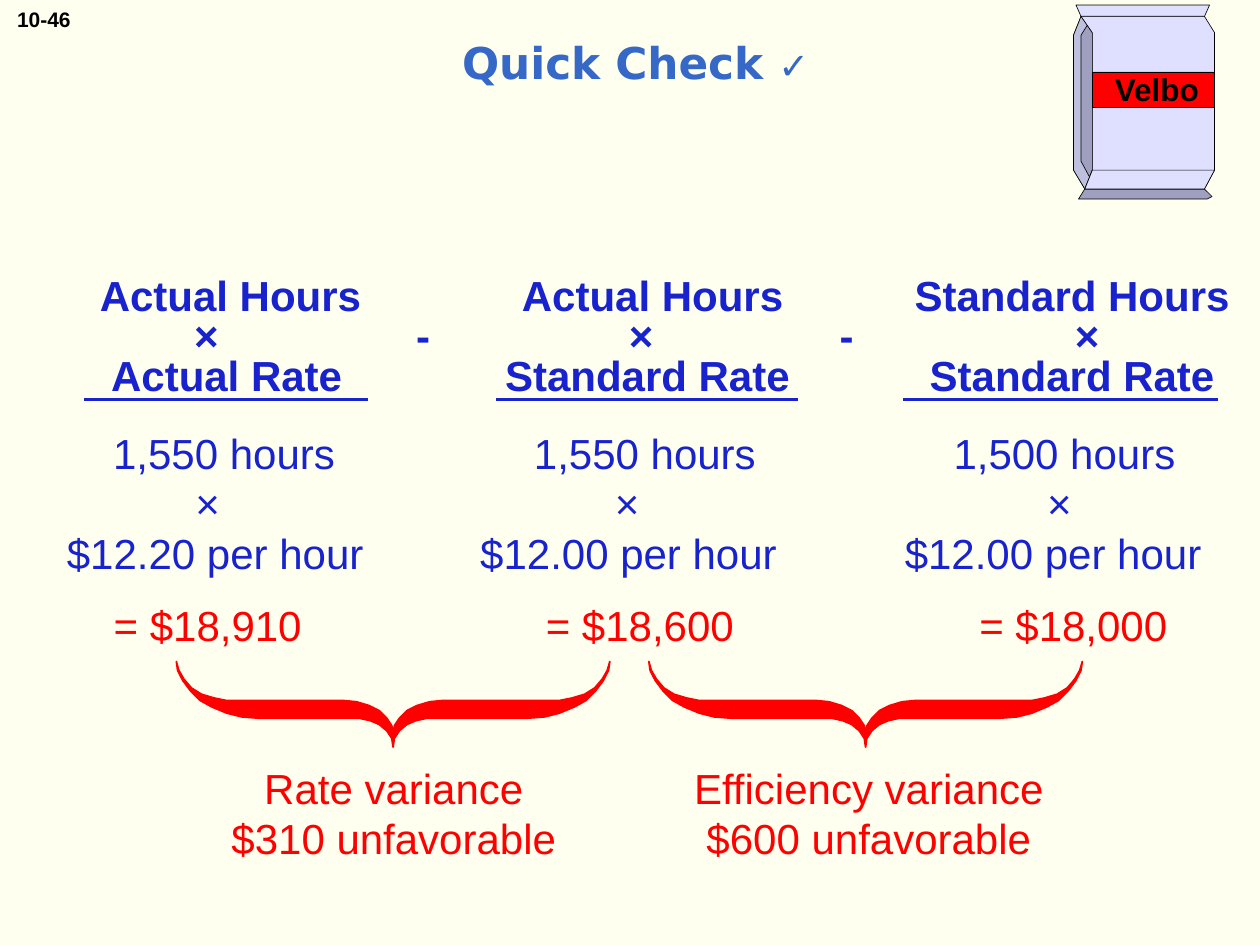
"""Builds the Quick Check slide on labor rate and efficiency variances."""
from lxml import etree
from pptx import Presentation
from pptx.dml.color import RGBColor
from pptx.enum import shapes, text
from pptx.oxml import ns
from pptx.util import Inches, Pt

CREAM = RGBColor(0xFF, 0xFF, 0xEF)
BLACK = RGBColor(0x00, 0x00, 0x00)
BLUE = RGBColor(0x18, 0x22, 0xCD)
TITLE_BLUE = RGBColor(0x35, 0x68, 0xC7)
RED = RGBColor(0xFF, 0x00, 0x00)
BAG_LIGHT = RGBColor(0xDF, 0xDF, 0xFF)
BAG_MID = RGBColor(0xBF, 0xBF, 0xDF)
BAG_DARK = RGBColor(0x9F, 0x9F, 0xBF)

HEADING = {"size": Pt(24), "bold": True, "name": "Arial"}
BODY = {"size": Pt(24), "bold": False, "name": "Arial"}
LABEL = {"size": Pt(18), "bold": True, "name": "Arial"}
PAGE = {"size": Pt(12), "bold": True, "name": "Arial"}
TITLE = {"size": Pt(25), "bold": True, "name": "DejaVu Sans"}
CHECK = {"size": Pt(21), "bold": True, "name": "DejaVu Sans"}

HEADING_ROWS = [
    ("Actual Hours|Actual Hours|Standard Hours", (1.83, 5.18, 8.51), BLUE, 0),
    ("×|-|×|-|×", (1.64, 3.36, 5.09, 6.72, 8.63), BLUE, 0),
    ("Actual Rate|Standard Rate|Standard Rate", (1.8, 5.14, 8.51), BLUE, 0),
]
AMOUNT_ROWS = [
    ("1,550 hours|1,550 hours|1,500 hours", (1.78, 5.12, 8.45), BLUE, 0),
    ("×|×|×", (1.65, 4.98, 8.41), BLUE, 0),
    ("$12.20 per hour|$12.00 per hour|$12.00 per hour", (1.71, 4.99, 8.36), BLUE, 0),
    ("= $18,910|= $18,600|= $18,000", (1.65, 5.08, 8.52), RED, 12),
]
UNDERLINES = [(0.67, 2.92), (3.94, 6.33), (7.17, 9.67)]
VARIANCES = [
    (3.12, 1.0, ("Rate variance", "$310 unfavorable")),
    (6.87, 4.77, ("Efficiency variance", "$600 unfavorable")),
]
HALF_BRACE = [
    (0, 0.68), (0.01, 0.61), (0.05, 0.55), (0.11, 0.5), (0.18, 0.47), (0.27, 0.45),
    (1.07, 0.45), (1.2, 0.44), (1.32, 0.41), (1.44, 0.36), (1.53, 0.31), (1.61, 0.23),
    (1.67, 0.15), (1.71, 0.07), (1.72, 0), (1.7, 0.07), (1.66, 0.14), (1.6, 0.21),
    (1.52, 0.26), (1.42, 0.29), (1.32, 0.31), (0.39, 0.31), (0.29, 0.32), (0.19, 0.35),
    (0.11, 0.39), (0.05, 0.45), (0.01, 0.51), (0, 0.59),
]
BAG_BACK = [
    (BAG_DARK, [(8.58, 0.13), (8.52, 0.28), (8.52, 1.35), (8.61, 1.5), (8.67, 1.35),
                (8.67, 0.26)]),
    (BAG_MID, [(8.58, 0.13), (8.63, 0.2), (8.58, 0.28), (8.58, 1.28), (8.65, 1.41),
               (8.61, 1.5), (8.52, 1.35), (8.52, 0.28)]),
    (BAG_LIGHT, [(8.58, 0.13), (8.54, 0.04), (9.6, 0.04), (9.56, 0.13)]),
    (BAG_DARK, [(8.61, 1.5), (9.56, 1.5), (9.62, 1.56), (9.58, 1.58), (8.56, 1.58)]),
    (BAG_LIGHT, [(8.61, 1.5), (9.56, 1.5), (9.64, 1.35), (9.64, 0.26), (9.56, 0.13),
                 (8.58, 0.13), (8.67, 0.26), (8.67, 1.35)]),
]
BAG_FOLD = [(8.67, 1.35), (8.61, 1.5), (9.56, 1.5), (9.64, 1.35)]


class SlideWriter:
    """Holds the slide and draws each kind of element in its style."""

    def __init__(self, slide):
        self.slide = slide
        self.shapes = slide.shapes
        slide.background.fill.solid()
        slide.background.fill.fore_color.rgb = CREAM

    def run(self, paragraph, words, style, color):
        run = paragraph.add_run()
        run.text = words
        for key, value in style.items():
            setattr(run.font, key, value)
        run.font.color.rgb = color

    def title(self, box, parts):
        title = self.shapes.title
        for key, value in zip(("left", "top", "width", "height"), box):
            setattr(title, key, Inches(value))
        title.text_frame.vertical_anchor = text.MSO_ANCHOR.MIDDLE
        paragraph = title.text_frame.paragraphs[0]
        paragraph.alignment = text.PP_ALIGN.CENTER
        for words, style in parts:
            self.run(paragraph, words, style, TITLE_BLUE)

    def text(self, box, lines, style, color, wrap=True, **layout):
        frame = self.shapes.add_textbox(*map(Inches, box)).text_frame
        frame.word_wrap = wrap
        for index, words in enumerate(lines):
            paragraph = frame.add_paragraph() if index else frame.paragraphs[0]
            for key, value in layout.items():
                setattr(paragraph, key, value)
            self.run(paragraph, words, style, color)
        return frame

    def columns(self, box, rows, style, pitch):
        lines = ["\t" + cells.replace("|", "\t") for cells, *_ in rows]
        frame = self.text(box, lines, style, BLUE, line_spacing=Pt(pitch))
        for paragraph, (_, centers, color, gap) in zip(frame.paragraphs, rows):
            paragraph.space_before = Pt(gap)
            paragraph.runs[0].font.color.rgb = color
            properties = paragraph._p.get_or_add_pPr()
            stops = etree.SubElement(properties, ns.qn("a:tabLst"))
            for center in centers:
                position = Inches(center - box[0] - 0.1)
                etree.SubElement(stops, ns.qn("a:tab"), pos=str(int(position)), algn="ctr")

    def paint(self, shape, fill, line, width):
        shape.shadow.inherit = False
        shape.fill.solid()
        shape.fill.fore_color.rgb = fill
        shape.line.color.rgb = line
        shape.line.width = Pt(width)

    def outline(self, points, fill, line=BLACK, width=0.38):
        start, *rest = [(Inches(x), Inches(y)) for x, y in points]
        builder = self.shapes.build_freeform(*start)
        builder.add_line_segments(rest, close=True)
        self.paint(builder.convert_to_shape(), fill, line, width)

    def brace(self, center, top):
        right = [(center + x, top + y) for x, y in HALF_BRACE]
        left = [(center - x, top + y) for x, y in reversed(HALF_BRACE[1:-1])]
        self.outline(right + left, RED, RED, 1)

    def rectangle(self, box, fill):
        shape = self.shapes.add_shape(shapes.MSO_SHAPE.RECTANGLE, *map(Inches, box))
        self.paint(shape, fill, BLACK, 0.38)

    def rule(self, start, end, y):
        ends = map(Inches, (start, y, end, y))
        line = self.shapes.add_connector(shapes.MSO_CONNECTOR.STRAIGHT, *ends)
        line.line.color.rgb = BLUE
        line.line.width = Pt(2)
        etree.SubElement(line._element.spPr, ns.qn("a:effectLst"))


def main():
    deck = Presentation()
    deck.slide_width, deck.slide_height = Inches(10), Inches(7.5)
    writer = SlideWriter(deck.slides.add_slide(deck.slide_layouts[5]))

    writer.title((0.17, 0.08, 9.75, 0.83), [("Quick Check ", TITLE), ("✓", CHECK)])
    writer.text((0.02, 0, 0.64, 0.3), ["10-46"], PAGE, BLACK, wrap=False,
                alignment=text.PP_ALIGN.RIGHT)

    writer.columns((0.34, 2.17, 9.58, 1.08), HEADING_ROWS, HEADING, 23)
    for start, end in UNDERLINES:
        writer.rule(start, end, 3.17)
    writer.columns((0.25, 3.34, 9.5, 1.89), AMOUNT_ROWS, BODY, 28.8)

    for center, left, lines in VARIANCES:
        writer.brace(center, 5.25)
        writer.text((left, 6, 4.25, 0.9), lines, BODY, RED,
                    alignment=text.PP_ALIGN.CENTER, line_spacing=Pt(28.8))

    for fill, points in BAG_BACK:
        writer.outline(points, fill)
    writer.rectangle((8.67, 0.57, 0.97, 0.28), RED)
    writer.outline(BAG_FOLD, BAG_LIGHT)
    writer.text((8.75, 0.51, 1.08, 0.4), ["Velbo"], LABEL, BLACK)

    deck.save("out.pptx")


if __name__ == "__main__":
    main()
